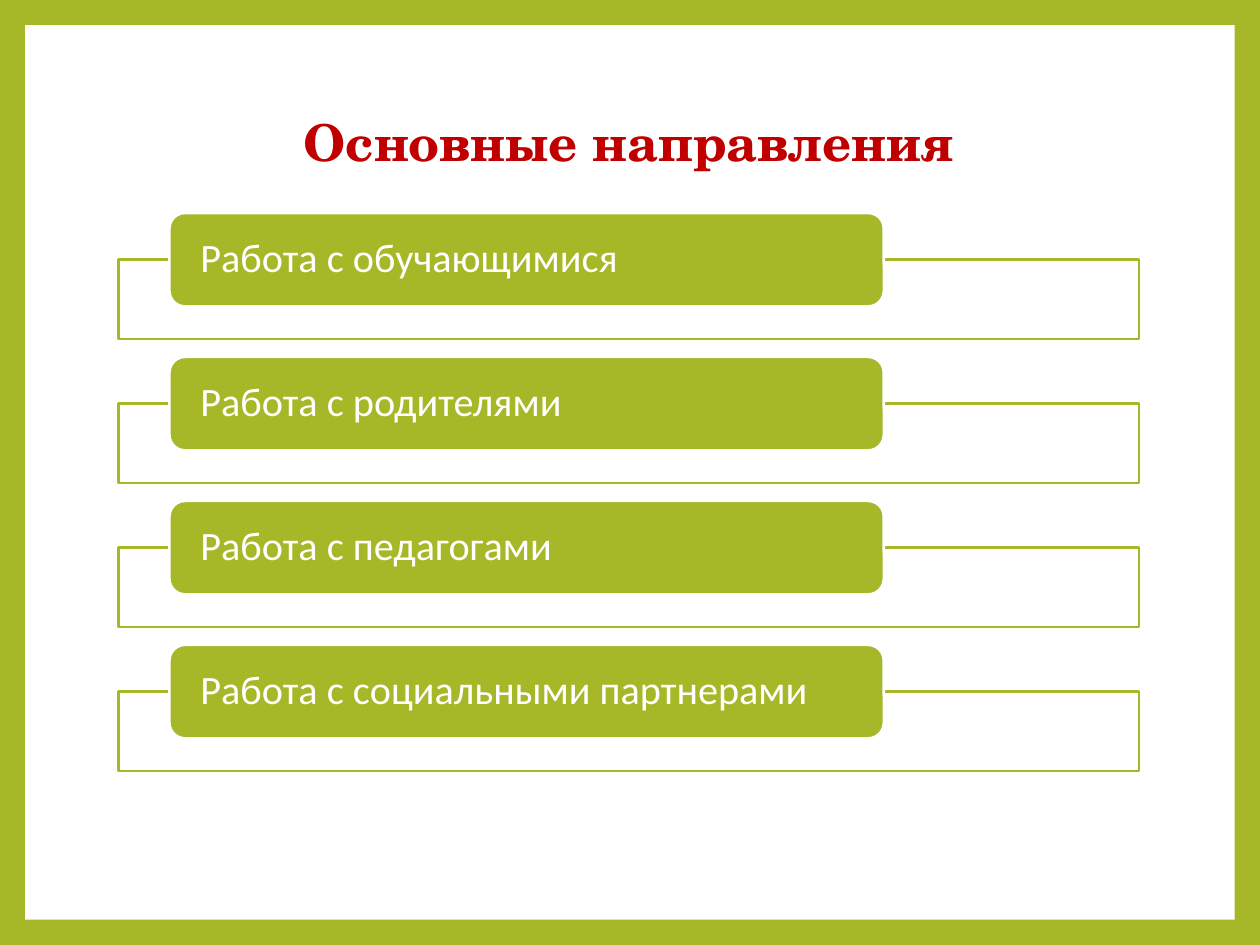
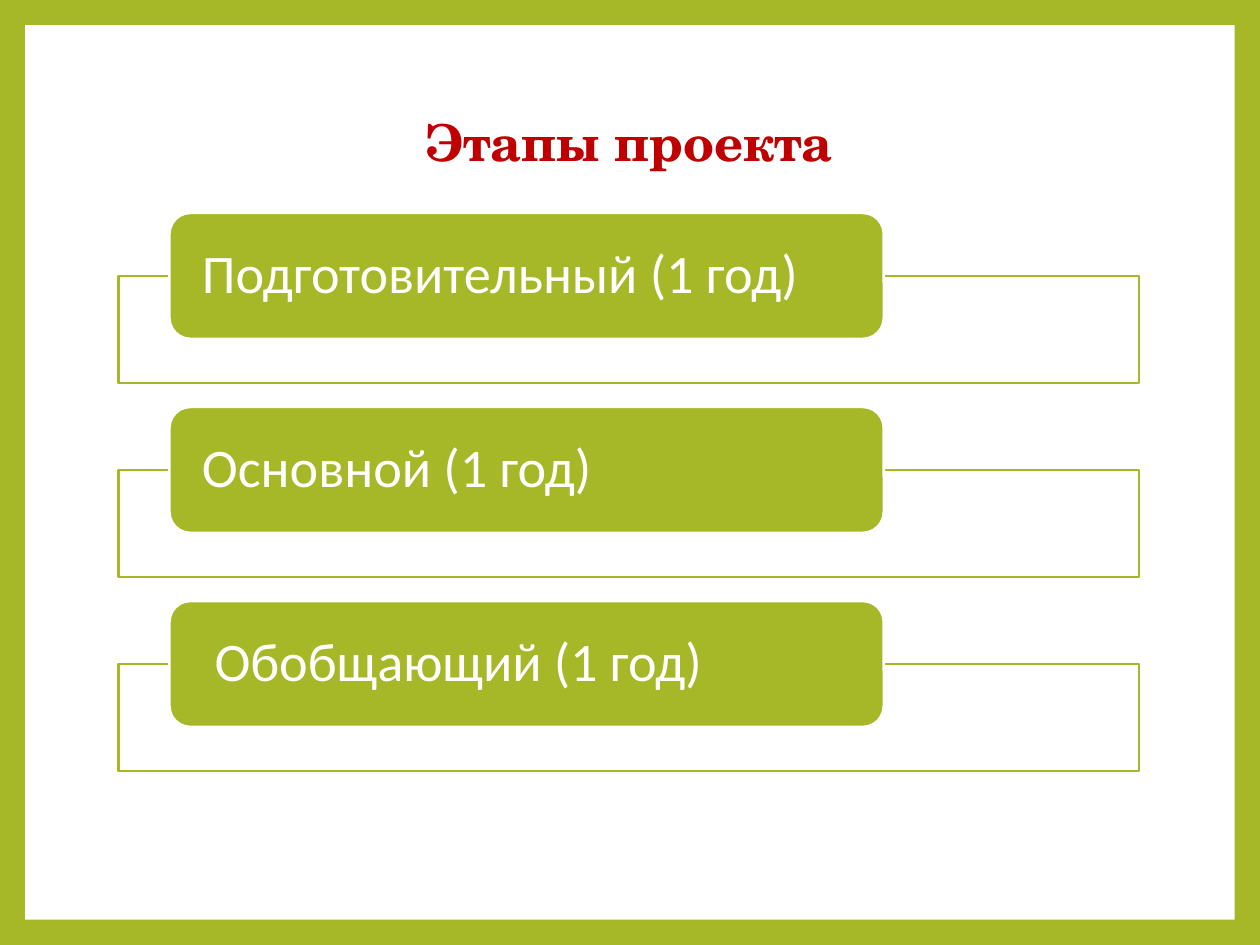
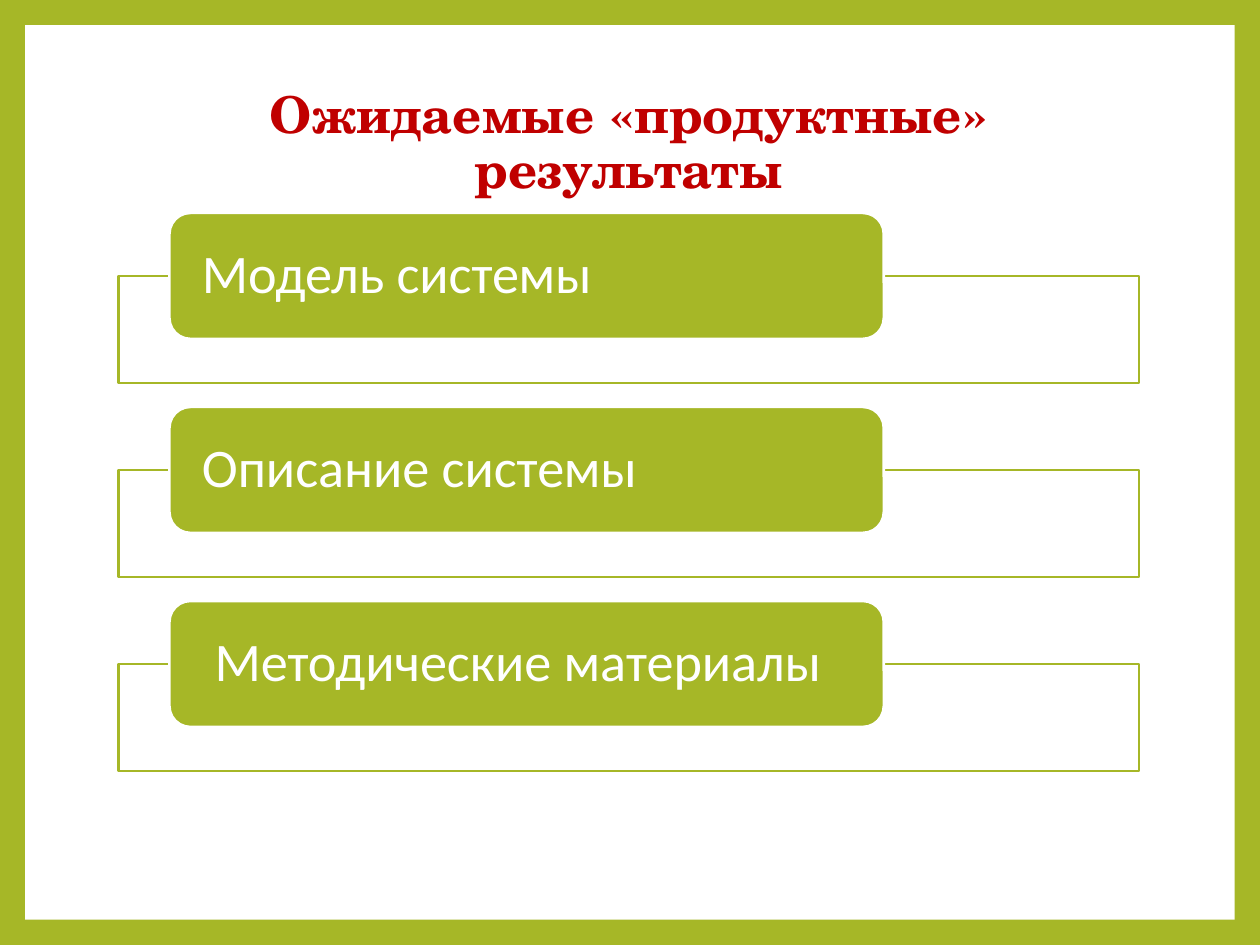
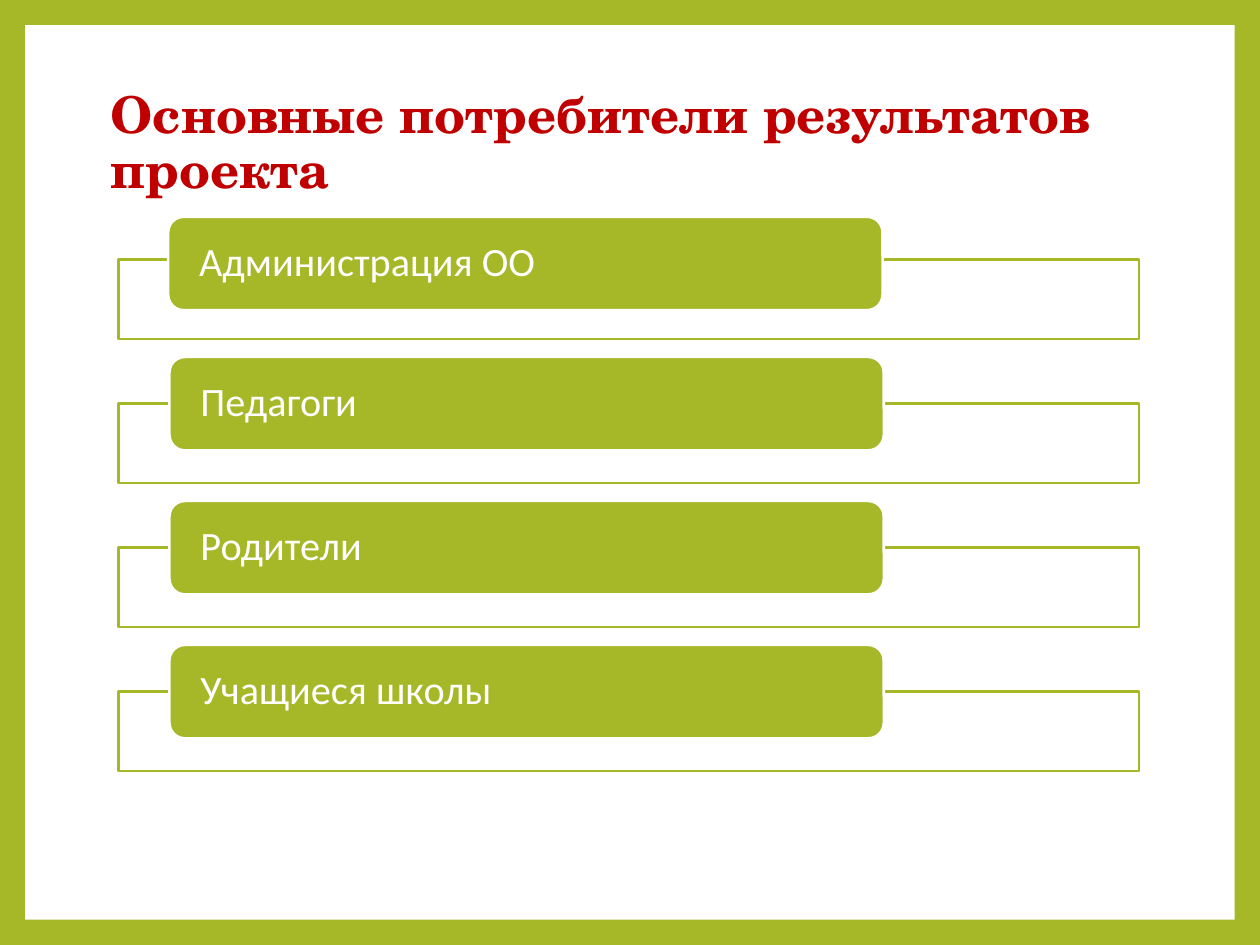
from pptx import Presentation
from pptx.dml.color import RGBColor
from pptx.enum.shapes import MSO_SHAPE as Shape
from pptx.enum.text import MSO_ANCHOR as Anchor, PP_ALIGN as Align
from pptx.oxml.ns import qn
from pptx.util import Inches, Pt
from lxml import etree

# Content: each item is its text and an extra indent in inches
SLIDES = [
    {"title": "Основные направления",
     "items": [("Работа с обучающимися", 0), ("Работа с родителями", 0),
               ("Работа с педагогами", 0), ("Работа с социальными партнерами", 0)]},
    {"title": "Этапы проекта",
     "items": [("Подготовительный (1 год)", 0), ("Основной (1 год)", 0),
               ("Обобщающий (1 год)", 0.1)]},
    {"title": "Ожидаемые «продуктные» результаты",
     "items": [("Модель системы", 0), ("Описание системы", 0),
               ("Методические материалы", 0.1)]},
    {"title": "Основные потребители результатов проекта",
     "title_box": (0.78, 0.67, 8.83, 0.96), "title_align": Align.LEFT,
     "first_tab_shift": (-0.01, 0.03),
     "items": [("Администрация ОО", 0), ("Педагоги", 0),
               ("Родители", 0), ("Учащиеся школы", 0)]},
]

# Shared look
GREEN, RED, WHITE = "A6B727", "C00000", "FFFFFF"
TITLE_FONT = {"name": "TeX Gyre Schola", "size": Pt(29), "bold": True}
WIDTH, HEIGHT, BORDER = 10, 7.5, 0.2
TITLE_BOX = (0.94, 0.67, 8.1, 0.96)

# List area, in inches
LIST_LEFT, LIST_TOP, LIST_WIDTH, LIST_HEIGHT = 0.94, 1.69, 8.1, 4.43
TAB_INDENT, TAB_WIDTH = 0.05 * LIST_WIDTH, 0.7 * LIST_WIDTH
TAB_INSET = 0.21
# Proportions of one row, as shares of the tab's height
FRAME_OFFSET, FRAME_HEIGHT, ROW_GAP = 0.5, 0.85, 0.19
POINTS_PER_INCH_OF_TAB = 31


def color(hex_value):
    return RGBColor.from_string(hex_value)


def add_box(slide, kind, box, fill, line=None):
    shape = slide.shapes.add_shape(kind, *map(Inches, box))
    shape.shadow.inherit = False
    shape.fill.solid()
    shape.fill.fore_color.rgb = color(fill)
    if line:
        shape.line.color.rgb = color(line)
        shape.line.width = Pt(1.5)
    else:
        shape.line.fill.background()
    return shape


def set_opacity(shape, percent):
    fill_color = shape.fill._xPr.find(qn("a:solidFill"))[0]
    etree.SubElement(fill_color, qn("a:alpha"), val=str(percent * 1000))


def write(shape, text, font, text_color, align):
    frame = shape.text_frame
    frame.word_wrap = True
    frame.vertical_anchor = Anchor.MIDDLE
    paragraph = frame.paragraphs[0]
    paragraph.alignment = align
    paragraph.line_spacing = 0.9
    run = paragraph.add_run()
    run.text = text
    for name, value in font.items():
        setattr(run.font, name, value)
    run.font.color.rgb = color(text_color)


def add_list(slide, items, first_tab_shift):
    count = len(items)
    row_share = FRAME_OFFSET + FRAME_HEIGHT
    tab_height = LIST_HEIGHT / (count * row_share + (count - 1) * ROW_GAP)
    item_font = {"name": "Calibri", "size": Pt(round(tab_height * POINTS_PER_INCH_OF_TAB))}
    for row, (text, indent) in enumerate(items):
        top = LIST_TOP + row * (row_share + ROW_GAP) * tab_height
        frame = add_box(slide, Shape.RECTANGLE,
                        (LIST_LEFT, top + FRAME_OFFSET * tab_height,
                         LIST_WIDTH, FRAME_HEIGHT * tab_height), WHITE, GREEN)
        set_opacity(frame, 90)

        shift_x, shift_y = first_tab_shift if row == 0 else (0, 0)
        tab = add_box(slide, Shape.ROUNDED_RECTANGLE,
                      (LIST_LEFT + TAB_INDENT + shift_x, top + shift_y,
                       TAB_WIDTH, tab_height), GREEN, WHITE)
        margins = {"margin_left": TAB_INSET + indent, "margin_right": TAB_INSET,
                   "margin_top": 0, "margin_bottom": 0}
        for name, value in margins.items():
            setattr(tab.text_frame, name, Inches(value))
        write(tab, text, item_font, WHITE, Align.LEFT)


def build_slide(presentation, content):
    slide = presentation.slides.add_slide(presentation.slide_layouts[6])
    add_box(slide, Shape.RECTANGLE,
            (BORDER, BORDER, WIDTH - 2 * BORDER, HEIGHT - 2 * BORDER), WHITE)
    title_box = content.get("title_box", TITLE_BOX)
    title = slide.shapes.add_textbox(*map(Inches, title_box))
    write(title, content["title"], TITLE_FONT, RED,
          content.get("title_align", Align.CENTER))
    add_list(slide, content["items"], content.get("first_tab_shift", (0, 0)))


def main():
    presentation = Presentation()
    presentation.slide_width, presentation.slide_height = Inches(WIDTH), Inches(HEIGHT)
    # The green border is the master's background
    background = presentation.slide_master.background.fill
    background.solid()
    background.fore_color.rgb = color(GREEN)
    for content in SLIDES:
        build_slide(presentation, content)
    presentation.save("out.pptx")


if __name__ == "__main__":
    main()
